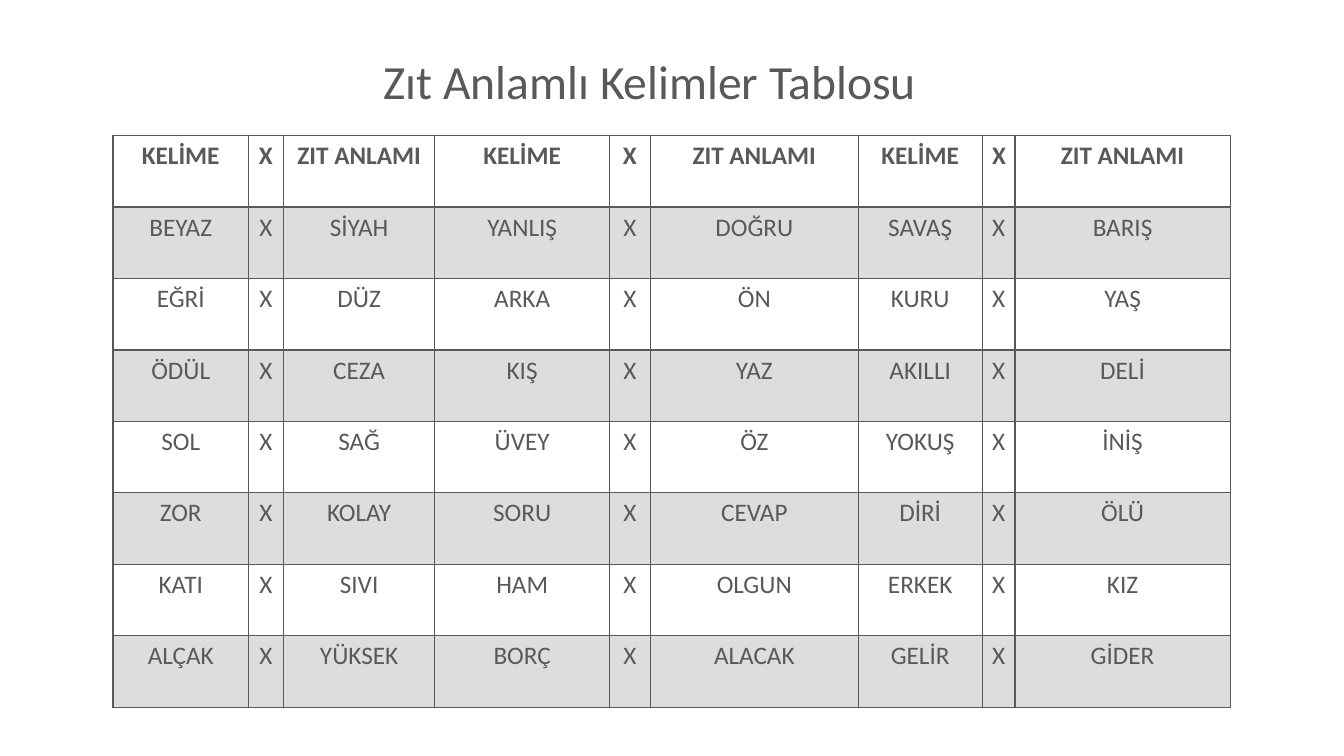
from lxml import etree
from pptx import Presentation
from pptx.dml.color import RGBColor
from pptx.enum.text import MSO_ANCHOR, PP_ALIGN
from pptx.oxml.ns import qn
from pptx.util import Cm, Pt

CENTER = PP_ALIGN.CENTER
LEFT = PP_ALIGN.LEFT
TOP = MSO_ANCHOR.TOP

HEADINGS = [("KELİME", "ZIT ANLAMI")] * 3
OPPOSITES = [
    [("BEYAZ", "SİYAH"), ("YANLIŞ", "DOĞRU"), ("SAVAŞ", "BARIŞ")],
    [("EĞRİ", "DÜZ"), ("ARKA", "ÖN"), ("KURU", "YAŞ")],
    [("ÖDÜL", "CEZA"), ("KIŞ", "YAZ"), ("AKILLI", "DELİ")],
    [("SOL", "SAĞ"), ("ÜVEY", "ÖZ"), ("YOKUŞ", "İNİŞ")],
    [("ZOR", "KOLAY"), ("SORU", "CEVAP"), ("DİRİ", "ÖLÜ")],
    [("KATI", "SIVI"), ("HAM", "OLGUN"), ("ERKEK", "KIZ")],
    [("ALÇAK", "YÜKSEK"), ("BORÇ", "ALACAK"), ("GELİR", "GİDER")],
]
COLUMN_WIDTHS = [3.41, 0.88, 3.82, 4.4, 1.03, 5.24, 3.12, 0.83, 5.42]
ROW_HEIGHT = 1.8


def color(value):
    return RGBColor.from_string(value)


class WordSlide:
    """Draws titles and ruled word tables on one slide in a shared style."""

    font = "Calibri"
    ink = "595959"
    band_opacity = 20

    def __init__(self, slide):
        self.slide = slide

    def add_text(self, paragraph, text, size, align, bold=False):
        paragraph.alignment = align
        run = paragraph.add_run()
        run.text = text
        run.font.name = self.font
        run.font.size = Pt(size)
        run.font.bold = bold
        run.font.color.rgb = color(self.ink)

    def title(self, text, left, top, width, height):
        frame = self.slide.shapes.add_textbox(
            Cm(left), Cm(top), Cm(width), Cm(height)).text_frame
        frame.word_wrap = True
        frame.vertical_anchor = TOP
        heading = frame.paragraphs[0]
        heading.line_spacing = 0.9
        self.add_text(heading, text, 34, LEFT)

    def shade(self, cell, banded):
        if not banded:
            cell.fill.background()
            return
        cell.fill.solid()
        cell.fill.fore_color.rgb = color(self.ink)
        tint = cell._tc.tcPr.find(f".//{qn('a:srgbClr')}")
        etree.SubElement(tint, qn("a:alpha"), val=str(self.band_opacity * 1000))

    def rule(self, cell, bottom):
        edges = {"L": 1, "R": 1, "T": 1, "B": bottom}
        for position, (side, weight) in enumerate(edges.items()):
            line = etree.Element(qn(f"a:ln{side}"), w=str(Pt(weight)))
            paint = etree.SubElement(line, qn("a:solidFill"))
            etree.SubElement(paint, qn("a:srgbClr"), val=self.ink)
            cell._tc.tcPr.insert(position, line)

    def word_table(self, rows, left, top):
        table = self.slide.shapes.add_table(
            len(rows), len(COLUMN_WIDTHS), Cm(left), Cm(top),
            Cm(sum(COLUMN_WIDTHS)), Cm(ROW_HEIGHT * len(rows))).table
        for column, width in zip(table.columns, COLUMN_WIDTHS):
            column.width = Cm(width)
        for index, pairs in enumerate(rows):
            header = index == 0
            table.rows[index].height = Cm(ROW_HEIGHT)
            words = [text for word, opposite in pairs
                     for text in (word, "X", opposite)]
            for cell, text in zip(table.rows[index].cells, words):
                self.add_text(cell.text_frame.paragraphs[0], text, 18, CENTER, header)
                self.shade(cell, index % 2 == 1)
                self.rule(cell, 2 if header else 1)


def main():
    deck = Presentation()
    deck.slide_width, deck.slide_height = Cm(33.87), Cm(19.05)
    page = WordSlide(deck.slides.add_slide(deck.slide_layouts[6]))
    page.title("Zıt Anlamlı Kelimler Tablosu", 9.42, 1.35, 16.15, 2.08)
    page.word_table([HEADINGS] + OPPOSITES, 2.85, 3.42)
    deck.save("out.pptx")


if __name__ == "__main__":
    main()
